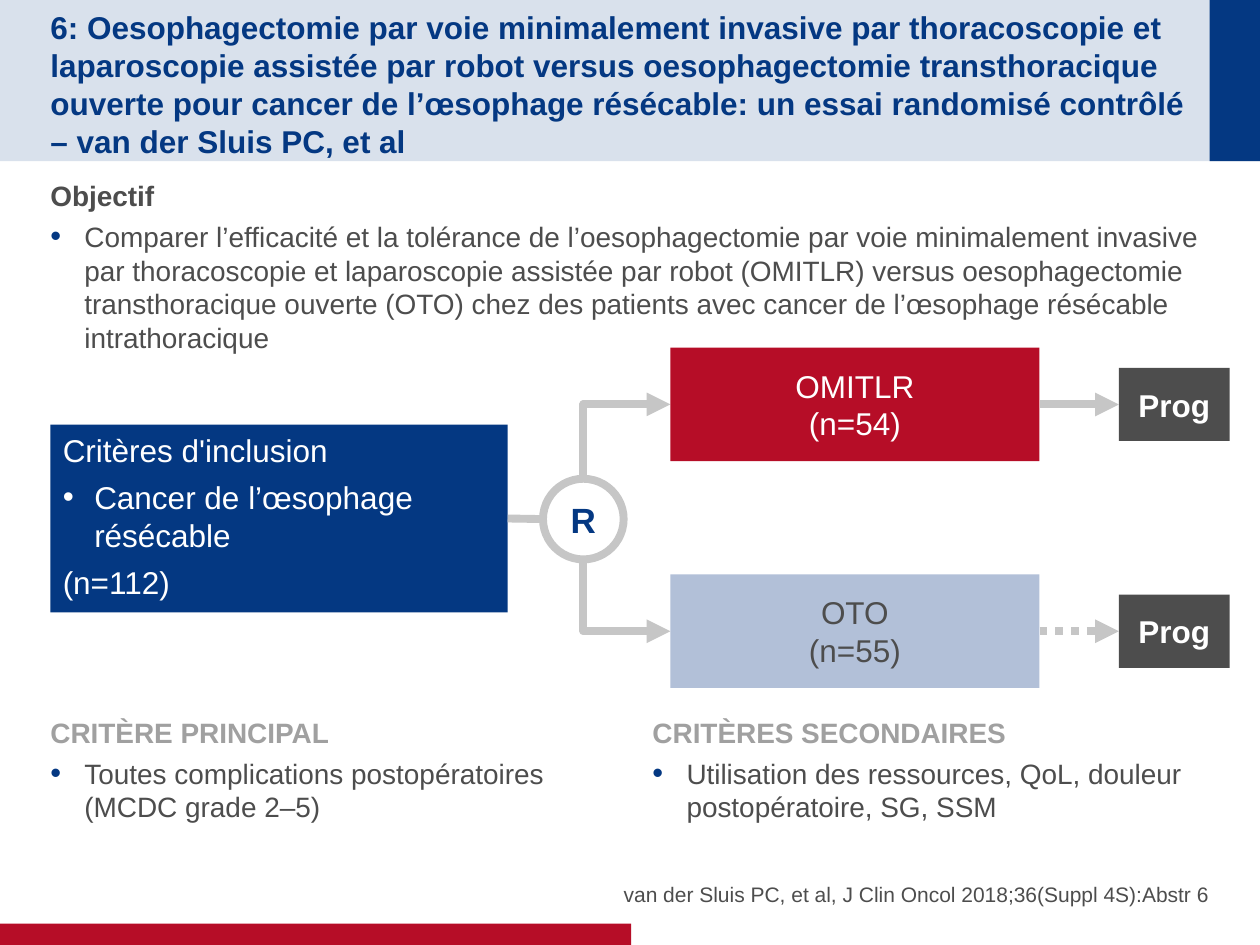
from dataclasses import dataclass

import pptx
import pptx.dml.color
import pptx.enum.dml
import pptx.enum.shapes
import pptx.enum.text
import pptx.oxml
import pptx.oxml.ns
import pptx.util

SHAPE = pptx.enum.shapes.MSO_SHAPE
CONNECTOR = pptx.enum.shapes.MSO_CONNECTOR
ALIGN = pptx.enum.text.PP_ALIGN
ANCHOR = pptx.enum.text.MSO_ANCHOR
Pt = pptx.util.Pt

COLORS = {"navy": "043882", "red": "B60D27", "pale": "B2C0D8", "dark": "4D4D4D",
          "grey": "A0A0A0", "line": "C6C6C6", "white": "FFFFFF"}
COLS, ROWS = 100, 75  # square cells
SLIDE_W, SLIDE_H = pptx.util.Inches(10), pptx.util.Inches(7.5)
LEFT = 4
MIDDLE_X, MIDDLE_Y = 46.3, 41.2
RADIUS = 3.2
TEXT_INSETS = (0, 0.5, 0, 0.5)
BOX_INSETS = (1, 0, 1, 0)


@dataclass
class Box:
    x: float
    y: float
    w: float
    h: float


@dataclass
class Arm:
    name: str
    count: int
    fill: str
    color: str
    center: float
    dotted: bool


ARMS = [Arm("OMITLR", 54, "red", "white", 32.1, False),
        Arm("OTO", 55, "pale", "dark", 50.1, True)]


def cells(n: float) -> int:
    return round(n * SLIDE_W / COLS)


def rgb(name: str):
    return pptx.dml.color.RGBColor.from_string(COLORS[name])


def xml(tag: str, **attrs):
    el = pptx.oxml.parse_xml(f"<{tag} {pptx.oxml.ns.nsdecls('a')}/>")
    for key, value in attrs.items():
        el.set(key, str(value))
    return el


def place(s, box: Box) -> None:
    s.left, s.top, s.width, s.height = map(cells, (box.x, box.y, box.w, box.h))


def set_frame(tf, insets=TEXT_INSETS, anchor=ANCHOR.TOP, wrap=True) -> None:
    tf.word_wrap = wrap
    tf.auto_size = pptx.enum.text.MSO_AUTO_SIZE.NONE
    tf.vertical_anchor = anchor
    tf.margin_left, tf.margin_top, tf.margin_right, tf.margin_bottom = map(cells, insets)


def write(tf, text: str, *, size=16, color="dark", bold=False, align=ALIGN.LEFT,
          after=0.0, indent=0.0, bullet=None) -> None:
    """Fill the first empty paragraph or add one; bullet is a colour name."""
    p = tf.paragraphs[-1]
    if p.runs:
        p = tf.add_paragraph()
    p.alignment = align
    p.space_before, p.space_after = Pt(0), Pt(after)
    ppr = p._p.get_or_add_pPr()
    ppr.set("marL", str(cells(indent)))
    ppr.set("indent", str(-cells(indent)))
    if bullet:
        bu_color = xml("a:buClr")
        bu_color.append(xml("a:srgbClr", val=COLORS[bullet]))
        ppr.append(bu_color)
        ppr.append(xml("a:buSzPct", val=110000 if bullet == "navy" else 100000))
        ppr.append(xml("a:buFont", typeface="Arial"))
        ppr.append(xml("a:buChar", char="•"))
    else:
        ppr.append(xml("a:buNone"))
    r = p.add_run()
    r.text = text
    r.font.name, r.font.size, r.font.bold = "Arial", Pt(size), bold
    r.font.color.rgb = rgb(color)


def write_section(tf, heading: str, item: str, color: str) -> None:
    write(tf, heading, color=color, bold=True, after=4)
    write(tf, item, after=4, indent=2.7, bullet="navy")


def add_box(shapes, box: Box, fill=None, kind=SHAPE.RECTANGLE):
    s = shapes.add_shape(kind, 0, 0, 0, 0)
    place(s, box)
    s.shadow.inherit = False
    if fill:
        s.fill.solid()
        s.fill.fore_color.rgb = rgb(fill)
    else:
        s.fill.background()
    s.line.fill.background()
    return s


def style_line(s, arrow=True, dotted=False) -> None:
    s.line.color.rgb = rgb("line")
    s.line.width = Pt(4.5)
    if dotted:
        s.line.dash_style = pptx.enum.dml.MSO_LINE.ROUND_DOT
    if arrow:
        s.element.xpath(".//a:ln")[0].append(xml("a:tailEnd", type="triangle"))
    s.element.spPr.append(xml("a:effectLst"))


def add_straight(shapes, x1, y1, x2, y2):
    return shapes.add_connector(CONNECTOR.STRAIGHT, *map(cells, (x1, y1, x2, y2)))


def add_bend(shapes, x1: float, y1: float, x2: float, y2: float) -> None:
    """Arrow that runs vertically, then to the right: a turned, flipped corner."""
    up = y2 < y1
    cx, cy = (x1 + x2) / 2, (y1 + y2) / 2
    half_w, half_h = abs(y2 - y1) / 2, (x2 - x1) / 2
    dy = half_h if up else -half_h
    s = shapes.add_connector(CONNECTOR.ELBOW, *map(
        cells, (cx + half_w, cy + dy, cx - half_w, cy - dy)))
    s.element.xpath(".//a:prstGeom")[0].set("prst", "bentConnector2")
    s.element.xpath(".//a:xfrm")[0].set("rot", str((90 if up else 270) * 60000))
    style_line(s)


def add_arm(shapes, arm: Arm) -> None:
    side = -RADIUS if arm.center < MIDDLE_Y else RADIUS
    add_bend(shapes, MIDDLE_X, MIDDLE_Y + side, 53.2, arm.center)
    box = add_box(shapes, Box(53.2, arm.center - 4.5, 29.3, 9), arm.fill)
    set_frame(box.text_frame, BOX_INSETS, ANCHOR.MIDDLE)
    for text in (arm.name, f"(n={arm.count})"):
        write(box.text_frame, text, size=18, color=arm.color, align=ALIGN.CENTER)
    prog = add_box(shapes, Box(88.8, arm.center - 2.9, 8.8, 5.8), "dark")
    set_frame(prog.text_frame, BOX_INSETS, ANCHOR.MIDDLE)
    write(prog.text_frame, "Prog", size=18, color="white", bold=True, align=ALIGN.CENTER)
    arrow = add_straight(shapes, 82.5, arm.center, 88.8, arm.center)
    arrow.begin_connect(box, 3)
    arrow.end_connect(prog, 1)
    style_line(arrow, dotted=arm.dotted)


def main() -> None:
    prs = pptx.Presentation()
    prs.slide_width, prs.slide_height = SLIDE_W, SLIDE_H
    slide = prs.slides.add_slide(prs.slide_layouts[3])
    shapes = slide.shapes
    title, body, source = list(slide.placeholders)

    band = add_box(shapes, Box(0, 0, COLS, 12.8), "navy")
    band.element.xpath(".//a:solidFill/a:srgbClr")[0].append(xml("a:alpha", val=15000))
    add_box(shapes, Box(96, 0, 4, 12.8), "navy")
    add_box(shapes, Box(0, 73.3, 50.1, ROWS - 73.3), "red")

    for s, box, insets, anchor in (
            (title, Box(LEFT, 2, 90.1, 8.8), (0, 0.5, 0, 0), ANCHOR.MIDDLE),
            (body, Box(LEFT, 13.7, 92, 51.9), TEXT_INSETS, ANCHOR.TOP),
            (source, Box(49.2, 66.7, 46.8, 5.3), (0, 0, 0, 0), ANCHOR.BOTTOM)):
        place(s, box)
        set_frame(s.text_frame, insets, anchor)
        shapes.element.append(s.element)  # in front of the bands
    write(title.text_frame, "6: Oesophagectomie par voie minimalement invasive par thoracoscopie "
          "et laparoscopie assistée par robot versus oesophagectomie transthoracique ouverte pour "
          "cancer de l’œsophage résécable: un essai randomisé contrôlé – van der Sluis PC, et al",
          size=18, color="navy", bold=True)
    write_section(body.text_frame, "Objectif", "Comparer l’efficacité et la tolérance de "
                  "l’oesophagectomie par voie minimalement invasive par thoracoscopie et "
                  "laparoscopie assistée par robot (OMITLR) versus oesophagectomie "
                  "transthoracique ouverte (OTO) chez des patients avec cancer de l’œsophage "
                  "résécable intrathoracique", "dark")
    write(source.text_frame, "van der Sluis PC, et al, J Clin Oncol 2018;36(Suppl 4S):Abstr 6",
          size=12, align=ALIGN.RIGHT, after=4)

    for box, insets, heading, item in (
            (Box(LEFT, 56.3, 45.2, 7.6), TEXT_INSETS, "CRITÈRE PRINCIPAL",
             "Toutes complications postopératoires (MCDC grade 2–5)"),
            (Box(50.8, 56.3, 45.2, 13.9), (1, 0.5, 1, 0.5), "CRITÈRES SECONDAIRES",
             "Utilisation des ressources, QoL, douleur postopératoire, SG, SSM")):
        tb = shapes.add_textbox(0, 0, 0, 0)
        place(tb, box)
        set_frame(tb.text_frame, insets)
        write_section(tb.text_frame, heading, item, "grey")

    circle = add_box(shapes, Box(MIDDLE_X - RADIUS, MIDDLE_Y - RADIUS, 2 * RADIUS, 2 * RADIUS),
                     kind=SHAPE.OVAL)
    circle.line.color.rgb, circle.line.width = rgb("line"), Pt(4.5)
    set_frame(circle.text_frame, (1, 0.5, 1, 0.5), ANCHOR.MIDDLE, wrap=False)
    write(circle.text_frame, "R", size=20, color="navy", bold=True, align=ALIGN.CENTER)

    inclusion = add_box(shapes, Box(LEFT, 33.7, 36.3, 14.9), "navy", SHAPE.ROUNDED_RECTANGLE)
    inclusion.adjustments[0] = 0
    tf = inclusion.text_frame
    set_frame(tf, (1, 0.5, 1, 0.5))
    write(tf, "Critères d'inclusion", size=18, color="white", after=5.4)
    write(tf, "Cancer de l’œsophage résécable", size=18, color="white", after=5.4,
          indent=2.5, bullet="white")
    write(tf, "(n=112)", size=18, color="white", after=5.4, indent=3.2)
    link = add_straight(shapes, 40.3, MIDDLE_Y, MIDDLE_X - RADIUS, MIDDLE_Y)
    link.begin_connect(inclusion, 3)
    style_line(link, arrow=False)

    for arm in ARMS:
        add_arm(shapes, arm)
    prs.save("out.pptx")


if __name__ == "__main__":
    main()
